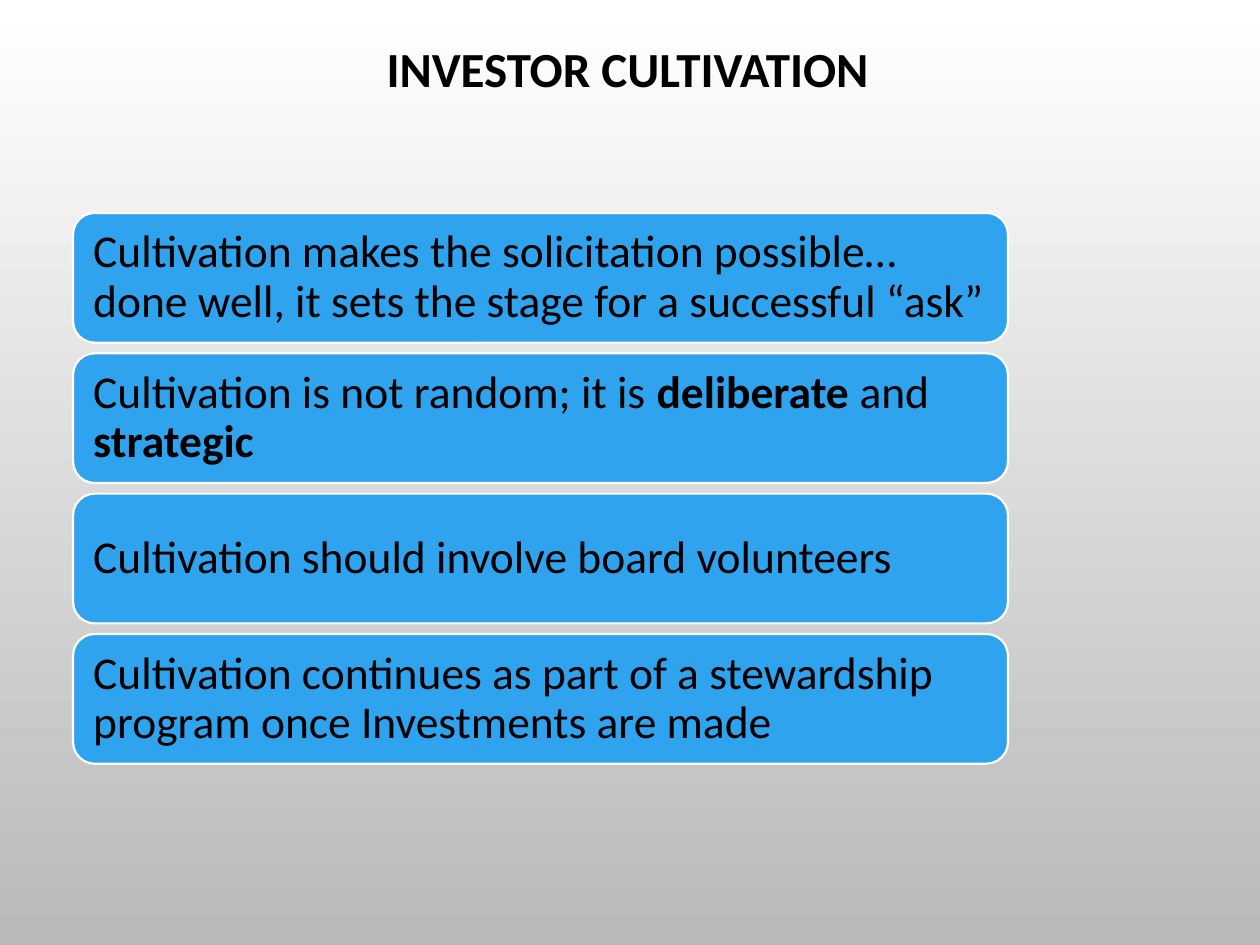
from pptx import Presentation
from pptx.dml.color import RGBColor
from pptx.enum.shapes import MSO_SHAPE
from pptx.enum.text import MSO_ANCHOR, MSO_AUTO_SIZE, PP_ALIGN
from pptx.util import Inches, Pt

BLACK = RGBColor(0x00, 0x00, 0x00)
WHITE = RGBColor(0xFF, 0xFF, 0xFF)
GRAY = RGBColor(0xB9, 0xB9, 0xB9)
BLUE = RGBColor(0x2F, 0xA3, 0xEE)

POINTS = [
    [("Cultivation makes the solicitation possible…done well, "
      "it sets the stage for a successful “ask”", False)],
    [("Cultivation is not random; it is ", False), ("deliberate ", True),
     ("and ", False), ("strategic", True)],
    [("Cultivation should involve board volunteers", False)],
    [("Cultivation continues as part of a stewardship program "
      "once Investments are made", False)],
]


def write(frame, parts, size=26, align=PP_ALIGN.LEFT, inset=0.11):
    """Fill a text frame with one paragraph of (text, bold) parts."""
    frame.word_wrap = True
    frame.auto_size = MSO_AUTO_SIZE.NONE
    frame.vertical_anchor = MSO_ANCHOR.MIDDLE
    frame.margin_left = frame.margin_right = Inches(inset)
    frame.margin_top = frame.margin_bottom = Inches(inset)
    para = frame.paragraphs[0]
    para.alignment = align
    para.line_spacing = 0.9
    for text, bold in parts:
        run = para.add_run()
        run.text = text
        run.font.name = "Calibri"
        run.font.size = Pt(size)
        run.font.bold = bold
        run.font.color.rgb = BLACK


def shade(slide):
    """Paint the background from white at the top to gray."""
    fill = slide.background.fill
    fill.gradient()
    fill.gradient_angle = 270
    for stop, color in zip(fill.gradient_stops, (WHITE, GRAY)):
        stop.color.rgb = color


def add_title(slide, text):
    """Place and format the title."""
    title = slide.shapes.title
    title.left, title.top = Inches(1.94), Inches(0.17)
    title.width, title.height = Inches(6.08), Inches(0.79)
    write(title.text_frame, [(text, True)], size=28,
          align=PP_ALIGN.CENTER, inset=0.05)


def add_bar(slide, top, parts):
    """Add one rounded bar holding a point."""
    bar = slide.shapes.add_shape(
        MSO_SHAPE.ROUNDED_RECTANGLE,
        Inches(0.58), Inches(top), Inches(7.42), Inches(1.03))
    bar.shadow.inherit = False
    bar.fill.solid()
    bar.fill.fore_color.rgb = BLUE
    bar.line.color.rgb = WHITE
    bar.line.width = Pt(1.25)
    write(bar.text_frame, parts)


def main():
    """Build and save the slide."""
    deck = Presentation()
    deck.slide_width, deck.slide_height = Inches(10), Inches(7.5)
    slide = deck.slides.add_slide(deck.slide_layouts[5])
    shade(slide)
    add_title(slide, "INVESTOR CULTIVATION")
    for row, parts in enumerate(POINTS):
        add_bar(slide, 1.69 + row * 1.114, parts)
    deck.save("out.pptx")


if __name__ == "__main__":
    main()
